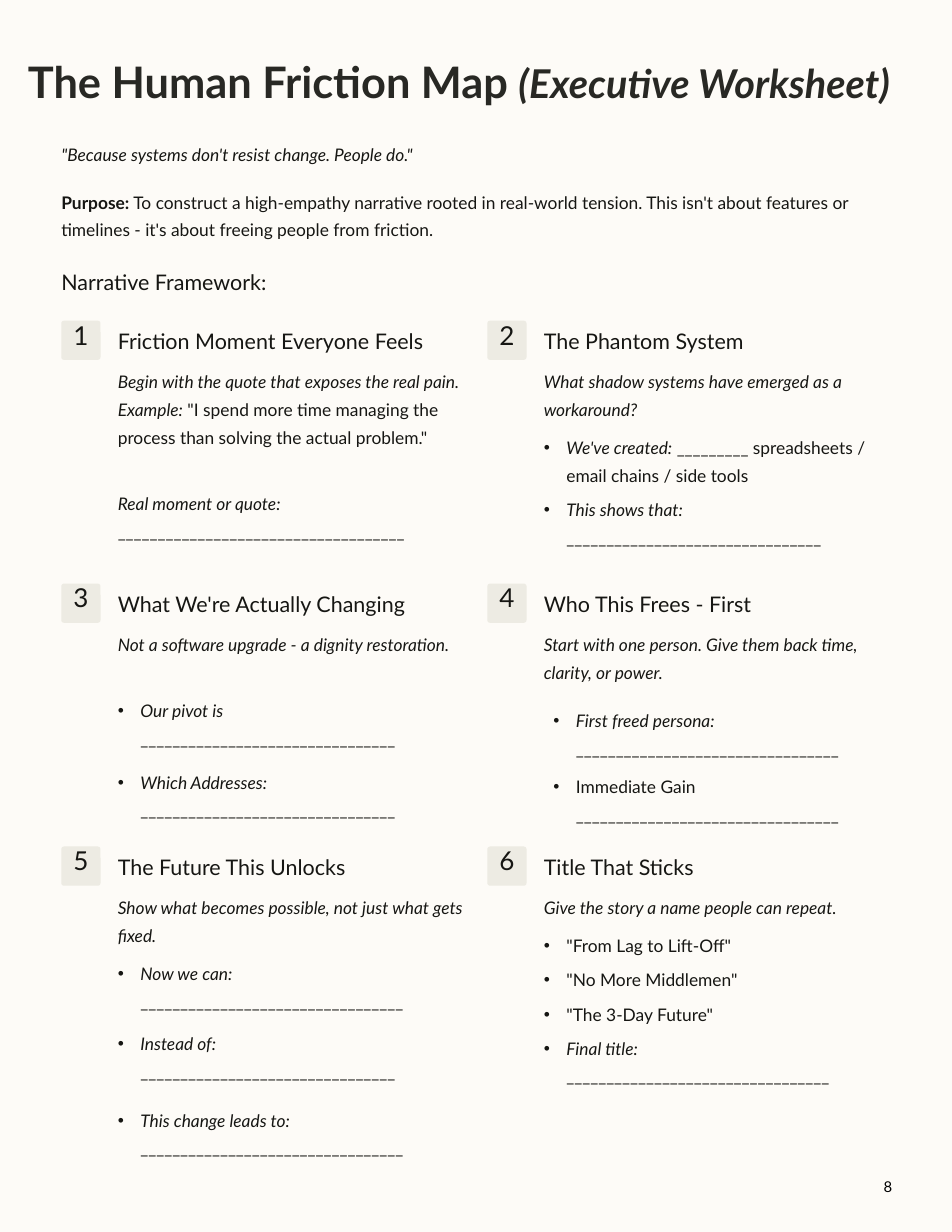
"""Build the Human Friction Map worksheet slide."""
from dataclasses import dataclass

from lxml.etree import SubElement
from pptx import Presentation
from pptx.dml.color import RGBColor
from pptx.enum.shapes import MSO_SHAPE
from pptx.enum.text import MSO_ANCHOR, MSO_AUTO_SIZE, PP_ALIGN
from pptx.oxml.ns import qn
from pptx.shapes.autoshape import Shape
from pptx.slide import Slide
from pptx.util import Inches, Pt


@dataclass(frozen=True)
class Theme:
    """Colours, typefaces and type sizes of the worksheet."""
    font: str = "Lato"
    bullet_font: str = "Arial"
    paper: RGBColor = RGBColor(0xFD, 0xFB, 0xF7)
    badge: RGBColor = RGBColor(0xED, 0xEB, 0xE3)
    title_ink: RGBColor = RGBColor(0x28, 0x28, 0x24)
    ink: RGBColor = RGBColor(0x16, 0x16, 0x13)
    page_ink: RGBColor = RGBColor(0, 0, 0)
    title: float = 52.5
    subtitle: float = 48
    number: float = 31.5
    heading: float = 26
    body: float = 21
    page: float = 18
    title_leading: float = 66
    heading_leading: float = 33
    body_leading: float = 33.5


THEME = Theme()


@dataclass(frozen=True)
class Span:
    """A stretch of text in one style."""
    text: str
    italic: bool = False
    bold: bool = False
    size: float = THEME.body
    ink: RGBColor = THEME.ink


@dataclass(frozen=True)
class Entry:
    """A block of a section, placed below the section's top."""
    drop: float
    spans: tuple[Span, ...]
    bullet: bool = True
    shift: float = 0
    height: float = 0.94


@dataclass(frozen=True)
class Section:
    """A numbered part of the framework."""
    heading: str
    heading_width: float
    entries: tuple[Entry, ...]


def prompt(label: str, blanks: int) -> tuple[Span, ...]:
    """Return an italic label followed by a line to fill in."""
    return Span(label, italic=True), Span(" " + "_" * blanks)


def intro(text: str, quote: str = "", height: float = 0.94) -> Entry:
    """Return the opening guidance of a section."""
    spans = (Span(text, italic=True),) + ((Span(quote),) if quote else ())
    return Entry(0.74, spans, bullet=False, height=height)


SECTIONS = (
    Section("Friction Moment Everyone Feels", 5.52, (
        intro("Begin with the quote that exposes the real pain. Example:",
              " \"I spend more time managing the process than solving the actual problem.\"", 1.88),
        Entry(2.79, prompt("Real moment or quote:", 36), bullet=False),
    )),
    Section("The Phantom System", 3.67, (
        intro("What shadow systems have emerged as a workaround?"),
        Entry(1.85, (Span("We've created:", italic=True),
                     Span(" _________ spreadsheets / email chains / side tools"))),
        Entry(2.89, prompt("This shows that:", 32)),
    )),
    Section("What We're Actually Changing", 5.18, (
        intro("Not a software upgrade - a dignity restoration."),
        Entry(1.85, prompt("Our pivot is", 32)),
        Entry(3.05, prompt("Which Addresses:", 32)),
    )),
    Section("Who This Frees - First", 3.91, (
        intro("Start with one person. Give them back time, clarity, or power."),
        Entry(2.02, prompt("First freed persona:", 33), shift=0.16),
        Entry(3.12, (Span("Immediate Gain " + "_" * 33),), shift=0.16),
    )),
    Section("The Future This Unlocks", 4.1, (
        intro("Show what becomes possible, not just what gets fixed."),
        Entry(1.85, prompt("Now we can:", 33)),
        Entry(3.02, prompt("Instead of:", 32)),
        Entry(4.31, prompt("This change leads to:", 33)),
    )),
    Section("Title That Sticks", 3.67, (
        intro("Give the story a name people can repeat.", height=0.47),
        Entry(1.38, (Span("\"From Lag to Lift-Off\""),), height=0.47),
        Entry(1.95, (Span("\"No More Middlemen\""),), height=0.47),
        Entry(2.53, (Span("\"The 3-Day Future\""),), height=0.47),
        Entry(3.1, prompt("Final title:", 33)),
    )),
)


def write(holder: Shape, spans: tuple[Span, ...], leading: float, wrap: bool = True,
          bullet: bool = False, align: PP_ALIGN = PP_ALIGN.LEFT) -> None:
    """Fill a text holder with one paragraph of styled spans."""
    frame = holder.text_frame
    frame.margin_left = frame.margin_right = frame.margin_top = frame.margin_bottom = 0
    frame.auto_size = MSO_AUTO_SIZE.NONE
    frame.vertical_anchor = MSO_ANCHOR.TOP
    frame.word_wrap = wrap
    paragraph = frame.paragraphs[0]
    if bullet:
        properties = paragraph._p.get_or_add_pPr()
        properties.set("marL", str(Inches(0.38)))
        properties.set("indent", str(Inches(-0.38)))
        SubElement(properties, qn("a:buFont")).set("typeface", THEME.bullet_font)
        SubElement(properties, qn("a:buChar")).set("char", "•")
    paragraph.alignment = align
    paragraph.line_spacing = Pt(leading)
    paragraph.font.size = Pt(spans[0].size)
    for span in spans:
        run = paragraph.add_run()
        run.text = span.text
        run.font.name = THEME.font
        run.font.size = Pt(span.size)
        run.font.bold = span.bold
        run.font.italic = span.italic
        run.font.color.rgb = span.ink


def add_text(slide: Slide, left: float, top: float, width: float, height: float) -> Shape:
    """Add an empty text box measured in inches."""
    return slide.shapes.add_textbox(Inches(left), Inches(top), Inches(width), Inches(height))


def add_heading(slide: Slide, text: str, left: float, top: float, width: float) -> None:
    """Add a one-line heading."""
    write(add_text(slide, left, top, width, 0.46), (Span(text, size=THEME.heading),),
          THEME.heading_leading, wrap=False)


def add_section(slide: Slide, number: int, section: Section, left: float, top: float) -> None:
    """Draw a numbered badge with its heading and entries."""
    badge = slide.shapes.add_shape(MSO_SHAPE.ROUNDED_RECTANGLE, Inches(left), Inches(top),
                                   Inches(0.66), Inches(0.66))
    badge.adjustments[0] = 0.07
    badge.shadow.inherit = False
    badge.fill.solid()
    badge.fill.fore_color.rgb = THEME.badge
    badge.line.fill.background()
    write(add_text(slide, left + 0.11, top + 0.06, 0.44, 0.55),
          (Span(str(number), size=THEME.number),), THEME.number, wrap=False,
          align=PP_ALIGN.CENTER)
    text_left = left + 0.95
    add_heading(slide, section.heading, text_left, top + 0.1, section.heading_width)
    for entry in section.entries:
        write(add_text(slide, text_left + entry.shift, top + entry.drop, 5.84, entry.height),
              entry.spans, THEME.body_leading, bullet=entry.bullet)


def main() -> None:
    """Build and save the worksheet."""
    deck = Presentation()
    deck.slide_width, deck.slide_height = Inches(16), Inches(20.71)
    slide = deck.slides.add_slide(deck.slide_layouts[5])
    slide.background.fill.solid()
    slide.background.fill.fore_color.rgb = THEME.paper

    title = slide.shapes.title
    title.left, title.top = Inches(0.47), Inches(0.89)
    title.width, title.height = Inches(14.8), Inches(0.92)
    write(title, (
        Span("The Human Friction Map ", bold=True, size=THEME.title, ink=THEME.title_ink),
        Span("(Executive Worksheet)", True, True, THEME.subtitle, THEME.title_ink),
    ), THEME.title_leading, wrap=False)

    margin = 1.03
    write(add_text(slide, margin, 2.31, 13.95, 0.47),
          (Span("\"Because systems don't resist change. People do.\"", italic=True),),
          THEME.body_leading, wrap=False)
    write(add_text(slide, margin, 3.11, 13.95, 0.94), (
        Span("Purpose:", bold=True),
        Span(" To construct a high-empathy narrative rooted in real-world tension. This isn't "
             "about features or timelines - it's about freeing people from friction."),
    ), THEME.body_leading)
    add_heading(slide, "Narrative Framework:", margin, 4.49, 3.67)

    for index, section in enumerate(SECTIONS):
        row, column = divmod(index, 2)
        add_section(slide, index + 1, section, margin + 7.16 * column, 5.39 + 4.42 * row)

    write(add_text(slide, 14.85, 19.79, 0.74, 0.3),
          (Span("8", size=THEME.page, ink=THEME.page_ink),), 21.6)
    deck.save("out.pptx")


if __name__ == "__main__":
    main()
